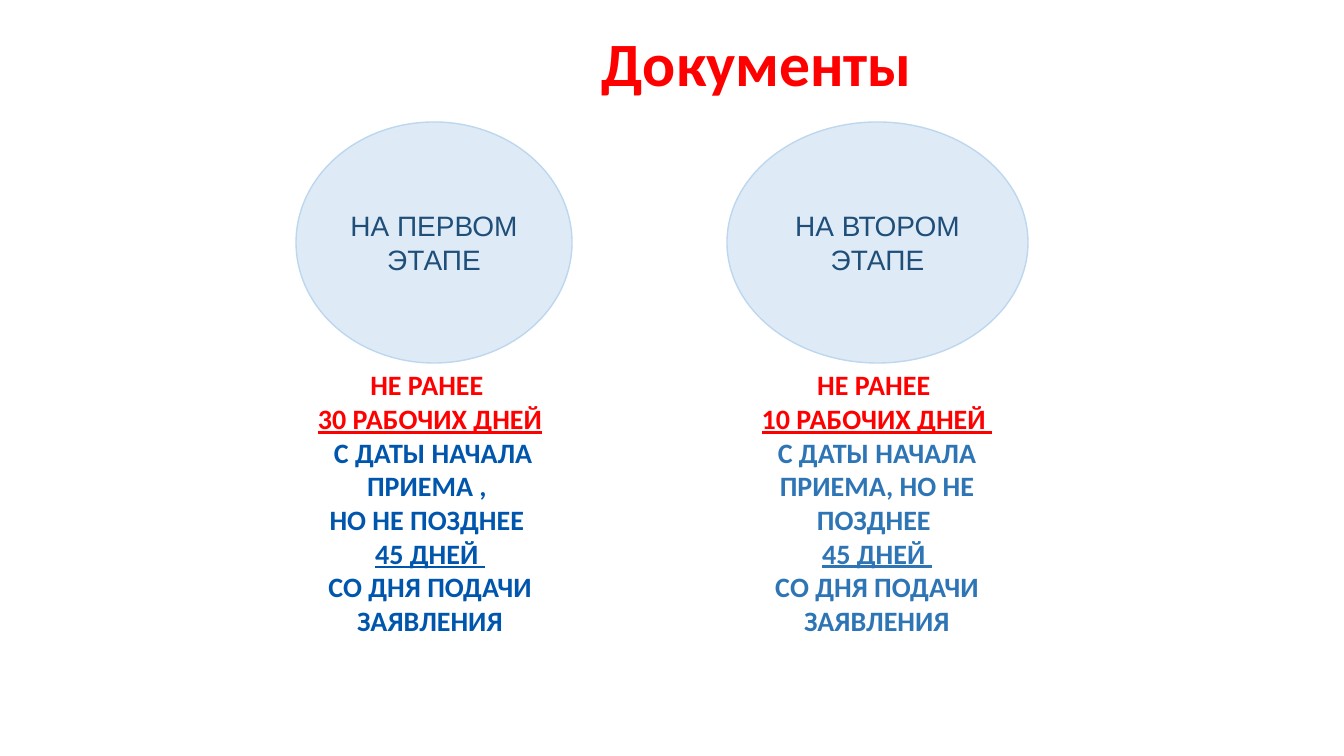
from pptx import Presentation
from pptx.dml.color import RGBColor
from pptx.enum.shapes import MSO_SHAPE
from pptx.enum.text import MSO_ANCHOR, MSO_AUTO_SIZE, PP_ALIGN
from pptx.util import Emu, Pt

PX = 914400 / 100.8
COLORS = {
    "red": "FF0000",
    "deep_blue": "0056AD",
    "mid_blue": "2E75B6",
    "navy": "1F4E79",
    "pale": "DEEBF7",
    "edge": "BDD7EE",
}


def px(n):
    return Emu(round(n * PX))


def rgb(name):
    return RGBColor.from_string(COLORS[name])


class StageSlide:
    """Holds the style and the current slide."""

    heading_font = "Calibri"
    label_font = "Arial"
    body_size = 20
    title_size = 44

    def __init__(self, prs):
        self.slide = prs.slides.add_slide(prs.slide_layouts[5])

    def format(self, p, font, size, color, bold=False, underline=False):
        p.alignment = PP_ALIGN.CENTER
        for r in p.runs:
            r.font.name = font
            r.font.size = Pt(size)
            r.font.bold = bold
            r.font.underline = underline
            r.font.color.rgb = rgb(color)

    def title(self, text, x, y, w, h):
        sp = self.slide.shapes.title
        sp.left, sp.top, sp.width, sp.height = map(px, (x, y, w, h))
        tf = sp.text_frame
        tf.text = text
        tf.auto_size = MSO_AUTO_SIZE.NONE
        tf.vertical_anchor = MSO_ANCHOR.TOP
        self.format(tf.paragraphs[0], self.heading_font, self.title_size,
                    "red", bold=True)

    def ellipse(self, text, x, y, w, h):
        sp = self.slide.shapes.add_shape(MSO_SHAPE.OVAL, *map(px, (x, y, w, h)))
        sp.shadow.inherit = False
        sp.fill.solid()
        sp.fill.fore_color.rgb = rgb("pale")
        sp.line.color.rgb = rgb("edge")
        sp.line.width = Pt(1)
        tf = sp.text_frame
        tf.text = text
        tf.word_wrap = True
        tf.vertical_anchor = MSO_ANCHOR.MIDDLE
        self.format(tf.paragraphs[0], self.label_font, self.body_size, "navy")

    def terms(self, lines, x, y, w, h):
        """Each line is (text, colour, underlined)."""
        sp = self.slide.shapes.add_textbox(*map(px, (x, y, w, h)))
        tf = sp.text_frame
        tf.word_wrap = True
        for i, (text, color, underline) in enumerate(lines):
            p = tf.add_paragraph() if i else tf.paragraphs[0]
            p.text = text
            self.format(p, self.heading_font, self.body_size, color,
                        bold=True, underline=underline)


def main():
    prs = Presentation()
    prs.slide_width, prs.slide_height = px(1344), px(756)
    s = StageSlide(prs)

    # Heading
    s.title("Документы", 283, 20, 948, 85)

    # Stages: label, ellipse x and width, text x, width and height,
    # earliest term, lines on the limit, colour
    stages = [
        ("НА ПЕРВОМ ЭТАПЕ", 296, 276, 292, 276, 346, "30 РАБОЧИХ ДНЕЙ",
         [" С ДАТЫ НАЧАЛА ПРИЕМА , ", "НО НЕ ПОЗДНЕЕ "], "deep_blue"),
        ("НА ВТОРОМ ЭТАПЕ", 727, 301, 727, 300, 312, "10 РАБОЧИХ ДНЕЙ ",
         ["С ДАТЫ НАЧАЛА ПРИЕМА, НО НЕ ПОЗДНЕЕ "], "mid_blue"),
    ]
    top, height = 122, 241
    for label, x, w, text_x, text_w, text_h, term, limit, color in stages:
        s.ellipse(label, x, top, w, height)
        lines = [("НЕ РАНЕЕ ", "red", False), (term, "red", True)]
        lines += [(text, color, False) for text in limit]
        lines += [("45 ДНЕЙ ", color, True),
                  ("СО ДНЯ ПОДАЧИ ЗАЯВЛЕНИЯ", color, False)]
        s.terms(lines, text_x, top + height, text_w, text_h)

    prs.save("out.pptx")


if __name__ == "__main__":
    main()
